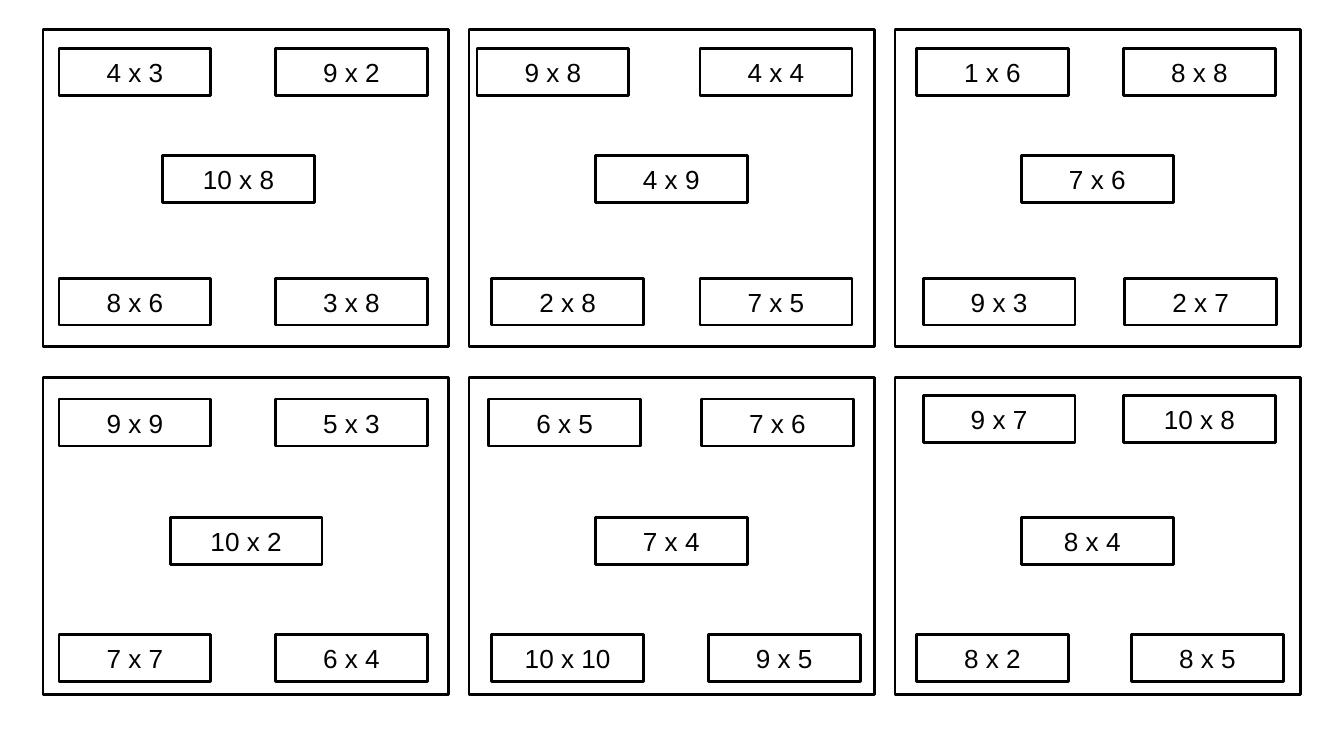
from pptx import Presentation
from pptx.dml.color import RGBColor
from pptx.enum.shapes import MSO_SHAPE
from pptx.enum.text import MSO_ANCHOR, PP_ALIGN
from pptx.util import Pt

RECTANGLE = MSO_SHAPE.RECTANGLE
MIDDLE = MSO_ANCHOR.MIDDLE
LEFT, CENTER = PP_ALIGN.LEFT, PP_ALIGN.CENTER

# Content: rows of cards; each card holds (product, left offset in card)
# in the order top pair, centre, bottom pair
CARD_ROWS = [
    [
        [("4 x 3", 8.6), ("9 x 2", 124.6), ("10 x 8", 64.1), ("8 x 6", 8.6), ("3 x 8", 124.6)],
        [("9 x 8", 4.3), ("4 x 4", 123.8), ("4 x 9", 67.7), ("2 x 8", 12.2), ("7 x 5", 123.8)],
        [("1 x 6", 11.5), ("8 x 8", 122.4), ("7 x 6", 67.7), ("9 x 3", 15.1), ("2 x 7", 123.1)],
    ],
    [
        [("9 x 9", 8.6), ("5 x 3", 124.6), ("10 x 2", 68.2), ("7 x 7", 8.6), ("6 x 4", 124.6)],
        [("6 x 5", 10.6), ("7 x 6", 124.6), ("7 x 4", 67.7), ("10 x 10", 12.2), ("9 x 5", 128.2)],
        [("9 x 7", 15.1), ("10 x 8", 122.4), ("8 x 4", 67.7), ("8 x 2", 11.5), ("8 x 5", 126.7)],
    ],
]
# Offsets of top pair, centre and bottom pair from the card top, per card row
LEVELS = [(10.1, 67.7, 133.2), (11.5, 74.9, 137.5)]
LEVEL_OF_PRODUCT = (0, 0, 1, 2, 2)
# Exceptions, keyed by (row, column)
RAISED_TOP_PAIR = {(1, 2): 9.4}
INDENTED_PRODUCTS = {(1, 2, 2): 15.6}

THEME = {
    "font": "Arial",
    "size": 14,
    "ink": RGBColor(0, 0, 0),
    "paper": RGBColor(255, 255, 255),
    "line": 1.5,
    "inset": 7.2,
}

# Geometry in points
SLIDE_W, SLIDE_H = 720, 405
GRID_LEFT, GRID_TOP = 23, 15.8
CARD_W, CARD_H = 217.4, 169.9
PITCH_X, PITCH_Y = 228.25, 186.5
PRODUCT_W, PRODUCT_H = 81.4, 25.2


def add_frame(slide, left, top, width, height):
    frame = slide.shapes.add_shape(RECTANGLE, Pt(left), Pt(top), Pt(width), Pt(height))
    frame.shadow.inherit = False
    frame.fill.solid()
    frame.fill.fore_color.rgb = THEME["paper"]
    frame.line.color.rgb = THEME["ink"]
    frame.line.width = Pt(THEME["line"])
    return frame


def write(frame, text, align=CENTER, indent=0):
    body = frame.text_frame
    body.word_wrap = True
    body.vertical_anchor = MIDDLE
    body.margin_left = Pt(THEME["inset"] + indent)
    body.margin_right = body.margin_top = body.margin_bottom = Pt(THEME["inset"])
    paragraph = body.paragraphs[0]
    paragraph.alignment = align
    run = paragraph.add_run()
    run.text = text
    run.font.name = THEME["font"]
    run.font.size = Pt(THEME["size"])
    run.font.color.rgb = THEME["ink"]


def add_card(slide, row, column, products):
    left = GRID_LEFT + column * PITCH_X
    top = GRID_TOP + row * PITCH_Y
    add_frame(slide, left, top, CARD_W, CARD_H)

    levels = list(LEVELS[row])
    levels[0] = RAISED_TOP_PAIR.get((row, column), levels[0])
    for index, (product, offset) in enumerate(products):
        level = levels[LEVEL_OF_PRODUCT[index]]
        indent = INDENTED_PRODUCTS.get((row, column, index), 0)
        product_box = add_frame(slide, left + offset, top + level, PRODUCT_W, PRODUCT_H)
        write(product_box, product, align=LEFT if indent else CENTER, indent=indent)


def main():
    deck = Presentation()
    deck.slide_width, deck.slide_height = Pt(SLIDE_W), Pt(SLIDE_H)
    slide = deck.slides.add_slide(deck.slide_layouts[6])

    # Grid of multiplication cards
    for row, cards in enumerate(CARD_ROWS):
        for column, products in enumerate(cards):
            add_card(slide, row, column, products)

    deck.save("out.pptx")


if __name__ == "__main__":
    main()
